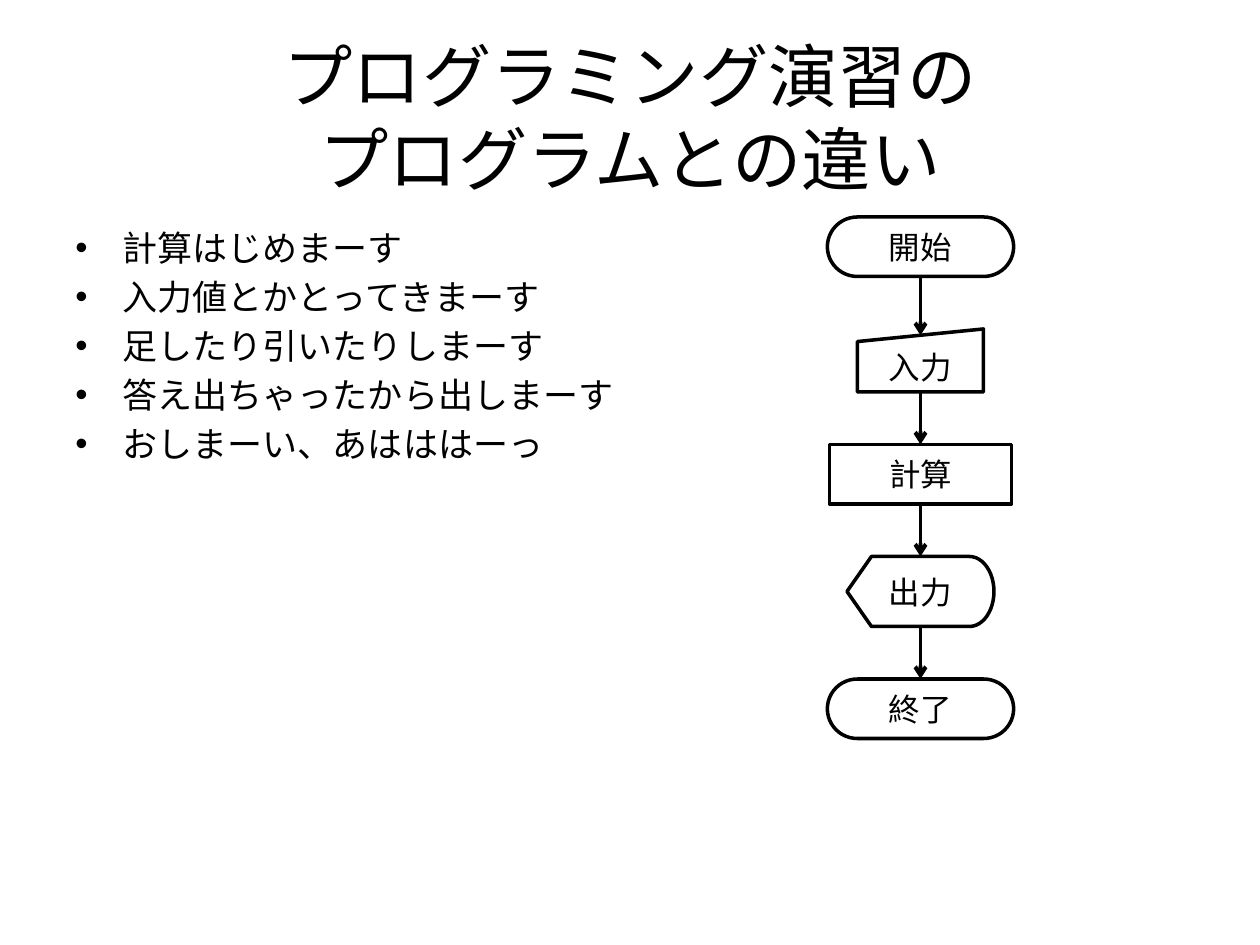
from lxml import etree
from pptx import Presentation
from pptx.dml.color import RGBColor
from pptx.enum import shapes, text
from pptx.oxml.ns import qn
from pptx.util import Pt

BLACK = "000000"
JP_FONT = "Noto Sans CJK JP"
CENTER_X = 526
FLOW_TOP = 124
FLOW_GAP = 30
BULLETS = ["計算はじめまーす", "入力値とかとってきまーす", "足したり引いたりしまーす",
           "答え出ちゃったから出しまーす", "おしまーい、あはははーっ"]
# label, preset, width, height, drop of the top edge at its middle
STEPS = [
    ("開始", "FLOWCHART_TERMINATOR", 106.5, 34, 0),
    ("入力", "FLOWCHART_MANUAL_INPUT", 72, 36, 3.6),
    ("計算", "FLOWCHART_PROCESS", 104, 34, 0),
    ("出力", "FLOWCHART_DISPLAY", 84, 40, 0),
    ("終了", "FLOWCHART_TERMINATOR", 106.5, 34, 0),
]


def color(value):
    return RGBColor.from_string(value)


def apply(obj, values):
    for name, value in values.items():
        setattr(obj, name, value)


def style_runs(p, size, font):
    for r in p.runs:
        apply(r.font, {"size": Pt(size), "name": font})
        r.font.color.rgb = color(BLACK)
        etree.SubElement(r.font._element, qn("a:ea"), typeface=JP_FONT)


def add_text(s, box, paragraphs, size, anchor, para_format):
    """Add a wrapped text box and return its paragraphs."""
    tf = s.shapes.add_textbox(*map(Pt, box)).text_frame
    apply(tf, {"word_wrap": True, "vertical_anchor": anchor})
    tf.text = "\n".join(paragraphs)
    for p in tf.paragraphs:
        apply(p, para_format)
        style_runs(p, size, JP_FONT)
    return tf.paragraphs


def add_bullet(p, indent):
    pPr = p._p.get_or_add_pPr()
    pPr.set("marL", str(Pt(indent)))
    pPr.set("indent", str(-Pt(indent)))
    etree.SubElement(pPr, qn("a:buFont"), typeface="Arial")
    etree.SubElement(pPr, qn("a:buChar"), char="•")


def add_step(s, label, preset, top, width, height):
    kind = getattr(shapes.MSO_SHAPE, preset)
    sp = s.shapes.add_shape(kind, *map(Pt, (CENTER_X - width / 2, top, width, height)))
    sp.shadow.inherit = False
    sp.fill.background()
    sp.line.color.rgb = color(BLACK)
    sp.line.width = Pt(2)
    tf = sp.text_frame
    apply(tf, {"word_wrap": False, "vertical_anchor": text.MSO_ANCHOR.MIDDLE,
               "margin_top": 0, "margin_bottom": 0})
    p = tf.paragraphs[0]
    apply(p, {"text": label, "alignment": text.PP_ALIGN.CENTER})
    style_runs(p, 18, "Calibri")
    return sp


def add_arrow(s, start, end, drop):
    """Join two steps; drop moves the tip down to a slanted top edge."""
    line = s.shapes.add_connector(shapes.MSO_CONNECTOR.STRAIGHT, 0, 0, 0, 0)
    line.begin_connect(start, 2)
    line.end_connect(end, 0)
    line.end_y += Pt(drop)
    line.line.color.rgb = color(BLACK)
    line.line.width = Pt(2.25)
    etree.SubElement(line.line._get_or_add_ln(), qn("a:tailEnd"), type="arrow")
    etree.SubElement(line._element.spPr, qn("a:effectLst"))


def add_flowchart(s):
    top, previous = FLOW_TOP, None
    for label, preset, width, height, drop in STEPS:
        sp = add_step(s, label, preset, top, width, height)
        if previous is not None:
            add_arrow(s, previous, sp, drop)
        previous = sp
        top += height + FLOW_GAP


def main():
    prs = Presentation()
    apply(prs, {"slide_width": Pt(720), "slide_height": Pt(540)})
    s = prs.slides.add_slide(prs.slide_layouts[6])
    add_text(s, (36, 21.6, 648, 90), ["プログラミング演習の\vプログラムとの違い"], 39.6,
             text.MSO_ANCHOR.MIDDLE,
             {"alignment": text.PP_ALIGN.CENTER, "line_spacing": Pt(47.5)})
    bullets = add_text(s, (36, 126, 346, 356), BULLETS, 20, text.MSO_ANCHOR.TOP,
                       {"line_spacing": Pt(24), "space_before": Pt(4)})
    for p in bullets:
        add_bullet(p, 27)
    add_flowchart(s)
    prs.save("out.pptx")


if __name__ == "__main__":
    main()
